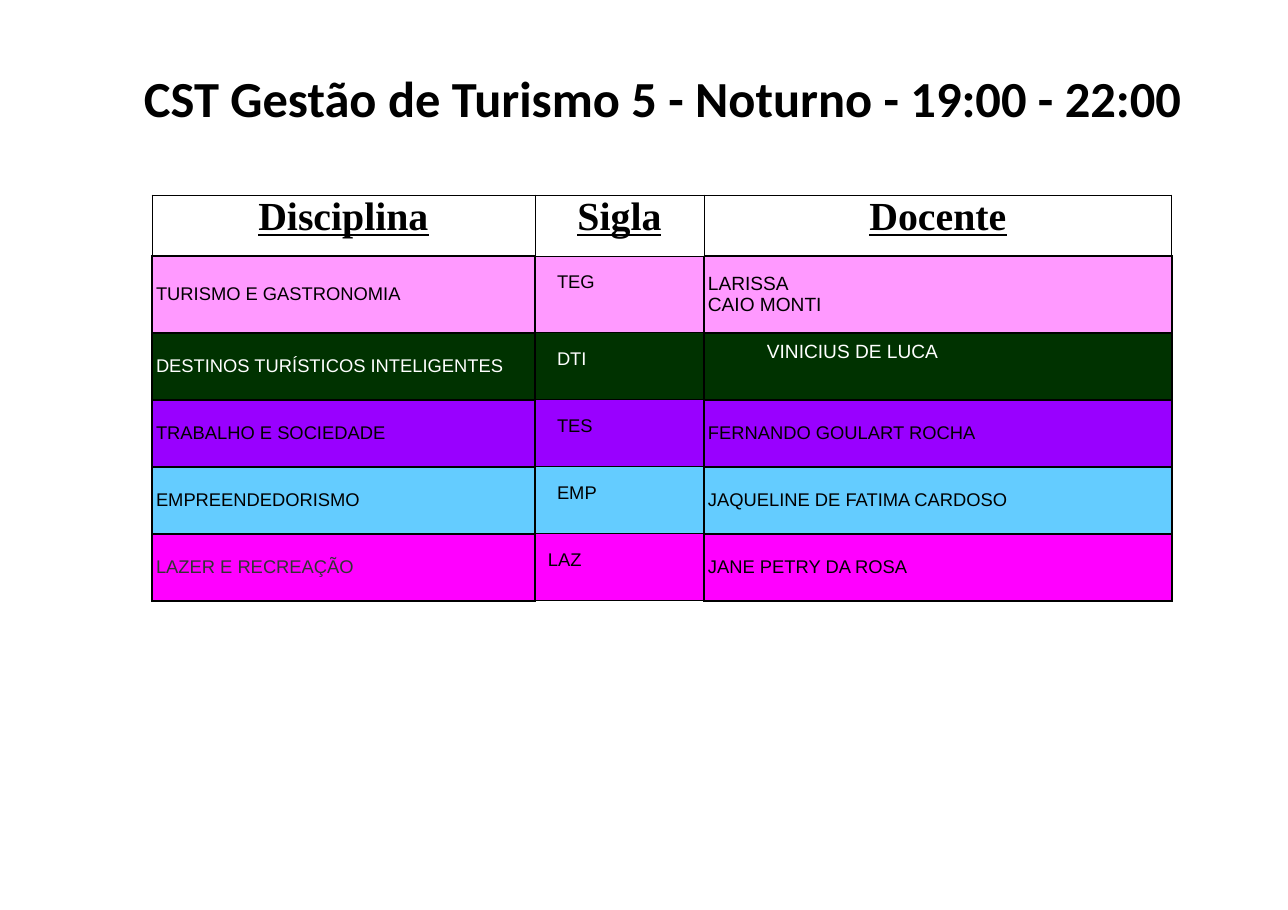
from lxml.etree import SubElement
from pptx import Presentation
from pptx.dml.color import RGBColor
from pptx.enum.text import MSO_ANCHOR as Anchor, PP_ALIGN as Align
from pptx.oxml.ns import qn
from pptx.util import Pt

PX = 8298  # EMU in one px


def paint(fill, color):
    fill.solid()
    fill.fore_color.rgb = RGBColor.from_string(color)


def style(frame, name, size, color, bold=False, line=False, align=Align.LEFT):
    """Set one font and alignment on all paragraphs of a text frame."""
    for para in frame.paragraphs:
        para.alignment = align
        font = para.font
        font.name, font.size, font.bold, font.underline = name, Pt(size), bold, line
        paint(font.fill, color)


prs = Presentation()
prs.slide_width, prs.slide_height = 1288 * PX, 910 * PX
slide = prs.slides.add_slide(prs.slide_layouts[6])

# Title
box = slide.shapes.add_textbox(54 * PX, 51 * PX, 1218 * PX, 84 * PX)
title = box.text_frame
title.word_wrap = True
title.margin_left = title.margin_right = 11 * PX
title.margin_top = title.margin_bottom = 11 * PX
title.text = "CST Gestão de Turismo 5 - Noturno - 19:00 - 22:00"
style(title, "Calibri", 33, "000000", bold=True, align=Align.CENTER)
title.paragraphs[0].line_spacing = 1.08
title.paragraphs[0].space_after = Pt(8)

# Course table: fill, text colour, course colour, texts
heads = ["Disciplina", "Sigla", "Docente"]
courses = [
    ("FF99FF", "000000", "000000", "TURISMO E GASTRONOMIA", "TEG", "LARISSA\nCAIO MONTI"),
    ("003200", "FFFFFF", "FFFFFF", "DESTINOS TURÍSTICOS INTELIGENTES", "DTI", "VINICIUS DE LUCA"),
    ("9900FF", "000000", "000000", "TRABALHO E SOCIEDADE", "TES", "FERNANDO GOULART ROCHA"),
    ("64CCFF", "000000", "000000", "EMPREENDEDORISMO", "EMP", "JAQUELINE DE FATIMA CARDOSO"),
    ("FF00FF", "000000", "333333", "LAZER E RECREAÇÃO", "LAZ", "JANE PETRY DA ROSA"),
]
widths = [383, 169, 468]
heights = [61, 77, 67, 67, 67, 67]
table = slide.shapes.add_table(
    len(heights), len(widths), 152 * PX, 195 * PX,
    sum(widths) * PX, sum(heights) * PX).table
table.first_row = table.horz_banding = False
for col, width in zip(table.columns, widths):
    col.width = width * PX
for row, height in zip(table.rows, heights):
    row.height = height * PX

for cell, head in zip(table.rows[0].cells, heads):
    cell.text = head
    cell.margin_left = cell.margin_right = 9 * PX
    cell.margin_top = cell.margin_bottom = 0
    style(cell.text_frame, "Times New Roman", 26, "000000", True, True, Align.CENTER)

for r, (fill, ink, first, *texts) in enumerate(courses, 1):
    for c, text in enumerate(texts):
        cell = table.cell(r, c)
        cell.text = text
        size = 12.5 if c == 2 and r <= 2 else 12
        style(cell.text_frame, "Arial", size, ink if c else first)
        if c == 1:
            cell.margin_left = (13 if text == "LAZ" else 22) * PX
            cell.margin_right = 13 * PX
            cell.margin_top = cell.margin_bottom = 16 * PX
        else:
            cell.vertical_anchor = Anchor.MIDDLE
            cell.margin_left = cell.margin_right = 4 * PX
            cell.margin_top = cell.margin_bottom = 3 * PX
        paint(cell.fill, fill)

# This teacher sits indented, near the top of the cell
guest = table.cell(2, 2)
guest.vertical_anchor = Anchor.TOP
guest.margin_left, guest.margin_top = 63 * PX, 8 * PX

# Borders come before the fill in a cell's properties
for r in range(len(heights)):
    for c in range(len(widths)):
        cell = table.cell(r, c)
        if r == 0:
            cell.fill.background()
        props = cell._tc.get_or_add_tcPr()
        thin = r == 0 or c == 1
        for i, side in enumerate(["lnL", "lnR", "lnT", "lnB"]):
            flat = side in ("lnT", "lnB")
            weight = 0.75 if thin and (r == 0 or flat) else 0.94
            edge = SubElement(props, qn("a:" + side), w=str(Pt(weight)))
            solid = SubElement(edge, qn("a:solidFill"))
            SubElement(solid, qn("a:srgbClr"), val="000000")
            props.insert(i, edge)

prs.save("out.pptx")
